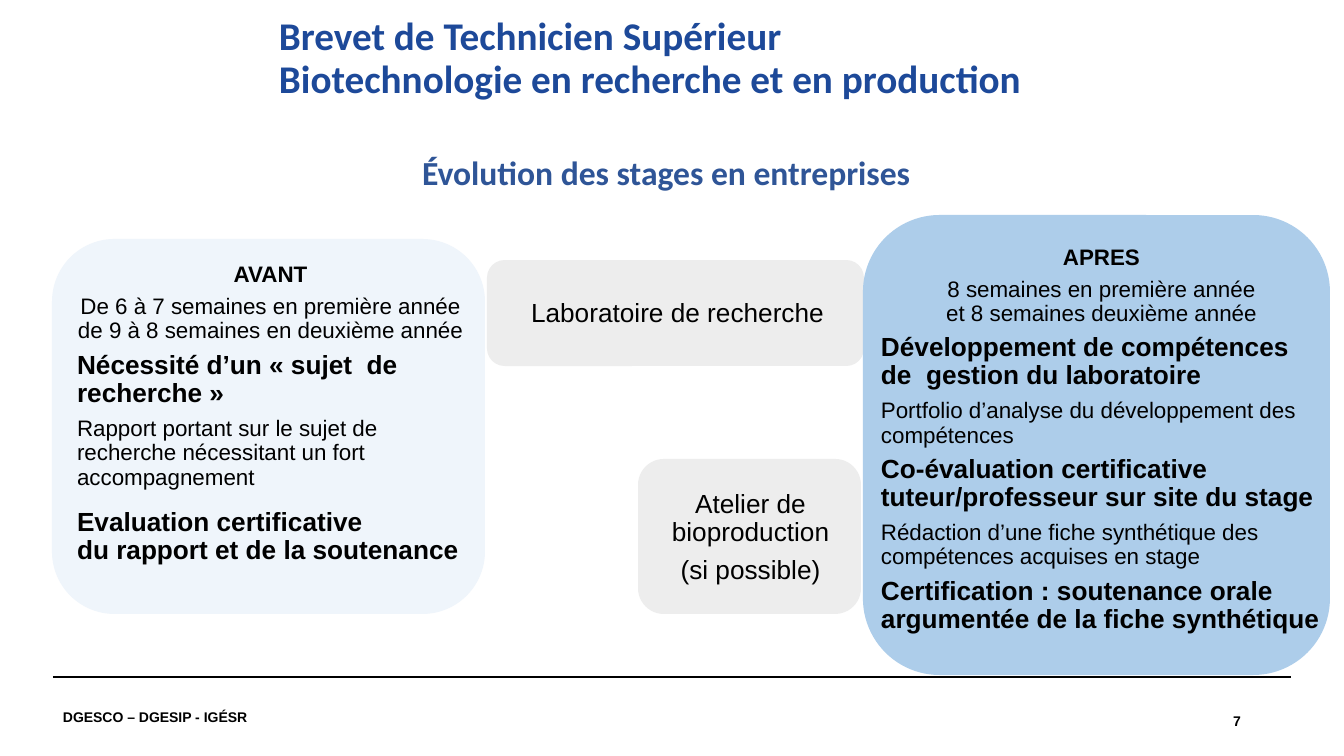
import pptx
import pptx.dml.color
import pptx.enum.shapes
import pptx.enum.text
import pptx.oxml.ns
import pptx.util
from lxml import etree

PX = 914400 / 100.8
ALIGN = pptx.enum.text.PP_ALIGN
ANCHOR = pptx.enum.text.MSO_ANCHOR
SHAPE = pptx.enum.shapes.MSO_SHAPE
BLACK, GREY = "000000", "EDEDED"
SMALL, LARGE = 16, 18.7


def px(n):
    return pptx.util.Emu(round(n * PX))


def rgb(value):
    return pptx.dml.color.RGBColor.from_string(value)


class Slide:
    def __init__(self, prs):
        self.s = prs.slides.add_slide(prs.slide_layouts[5])

    def fill_text(self, tf, paragraphs, font="Arial", color=BLACK, anchor=ANCHOR.MIDDLE,
                  inset=(0, 0), spacing=0.9, after=0.0):
        """Each paragraph is (text, size, bold, alignment, space before)."""
        tf.word_wrap = True
        tf.auto_size = pptx.enum.text.MSO_AUTO_SIZE.NONE
        tf.vertical_anchor = anchor
        tf.margin_left = tf.margin_right = px(inset[0])
        tf.margin_top = tf.margin_bottom = px(inset[1])
        for i, (text, size, bold, align, before) in enumerate(paragraphs):
            p = tf.add_paragraph() if i else tf.paragraphs[0]
            p.alignment = align
            p.line_spacing = spacing
            p.space_before = pptx.util.Pt(before)
            p.space_after = pptx.util.Pt(round(size * after, 1))
            for j, line in enumerate(text.split("\n")):
                if j:
                    p.add_line_break()
                r = p.add_run()
                r.text = line
                r.font.name = font
                r.font.size = pptx.util.Pt(size)
                r.font.bold = bold
                r.font.color.rgb = rgb(color)

    def title(self, x, y, w, h, paragraphs, **style):
        sp = self.s.shapes.title
        sp.left, sp.top, sp.width, sp.height = map(px, (x, y, w, h))
        self.fill_text(sp.text_frame, paragraphs, **style)

    def text(self, x, y, w, h, paragraphs, **style):
        sp = self.s.shapes.add_textbox(*map(px, (x, y, w, h)))
        self.fill_text(sp.text_frame, paragraphs, **style)

    def panel(self, x, y, w, h, fill):
        sp = self.s.shapes.add_shape(SHAPE.ROUNDED_RECTANGLE, *map(px, (x, y, w, h)))
        sp.shadow.inherit = False
        sp.fill.solid()
        sp.fill.fore_color.rgb = rgb(fill)
        sp.line.fill.background()

    def rule(self, x1, x2, y):
        line = self.s.shapes.add_connector(
            pptx.enum.shapes.MSO_CONNECTOR.STRAIGHT, *map(px, (x1, y, x2, y)))
        line.line.color.rgb = rgb(BLACK)
        line.line.width = pptx.util.Pt(0.75)
        etree.SubElement(line._element.spPr, pptx.oxml.ns.qn("a:effectLst"))


def heading(text):
    return text, SMALL, True, ALIGN.CENTER, 0


def duration(text):
    return text, SMALL, False, ALIGN.CENTER, 0


def key(text, before=0):
    return text, LARGE, True, ALIGN.LEFT, before


def detail(text):
    return text, SMALL, False, ALIGN.LEFT, 0


def place(text):
    return text, LARGE, False, ALIGN.CENTER, 0


def main():
    prs = pptx.Presentation()
    prs.slide_width, prs.slide_height = px(1344), px(756)
    s = Slide(prs)

    # Title and subtitle
    s.title(269, 12, 767, 96, [
        ("Brevet de Technicien Supérieur", 28, True, ALIGN.LEFT, 0),
        ("Biotechnologie en recherche et en production", 28, True, ALIGN.LEFT, 0),
    ], font="Calibri", color="1D4999", anchor=ANCHOR.TOP, inset=(10, 5))
    s.text(412, 151, 515, 48, [
        ("Évolution des stages en entreprises", 24, True, ALIGN.LEFT, 0),
    ], font="Calibri", color="2F5597", anchor=ANCHOR.TOP, inset=(10, 5))

    # Footer
    s.rule(53, 1291, 677)
    for box, text, align in [
        ((53, 690, 868, 53), "DGESCO – DGESIP - IGÉSR", ALIGN.LEFT),
        ((949, 700, 302, 41), "7", ALIGN.RIGHT),
    ]:
        s.text(*box, [(text, 10, True, align, 0)], inset=(10, 5), spacing=1.0)

    # Research laboratory
    s.panel(487, 260, 377, 106, GREY)
    s.text(515, 273, 325, 82, [place("Laboratoire de recherche")], after=0.35)

    # Before
    s.panel(52, 239, 433, 375, "EFF5FB")
    s.text(69, 260, 403, 309, [
        heading("AVANT"),
        duration("De 6 à 7 semaines en première année de 9 à 8 semaines en deuxième année"),
        key("Nécessité d’un « sujet  de recherche »"),
        detail("Rapport portant sur le sujet de recherche nécessitant un fort accompagnement"),
        key("Evaluation certificative\ndu rapport et de la soutenance", 8),
    ], inset=(8, 8), after=0.35)

    # After
    s.panel(863, 215, 467, 460, "ADCDEA")
    s.text(873, 237, 457, 406, [
        heading("APRES"),
        duration("8 semaines en première année\net 8 semaines deuxième année"),
        key("Développement de compétences de  gestion du laboratoire"),
        detail("Portfolio d’analyse du développement des compétences"),
        key("Co-évaluation certificative tuteur/professeur sur site du stage"),
        detail("Rédaction d’une fiche synthétique des compétences acquises en stage"),
        key("Certification : soutenance orale argumentée de la fiche synthétique"),
    ], inset=(8, 8), after=0.35)

    # Production workshop
    s.panel(638, 459, 223, 155, GREY)
    s.text(655, 478, 191, 120, [
        place("Atelier de bioproduction"),
        place("(si possible)"),
    ], after=0.35)

    prs.save("out.pptx")


if __name__ == "__main__":
    main()
